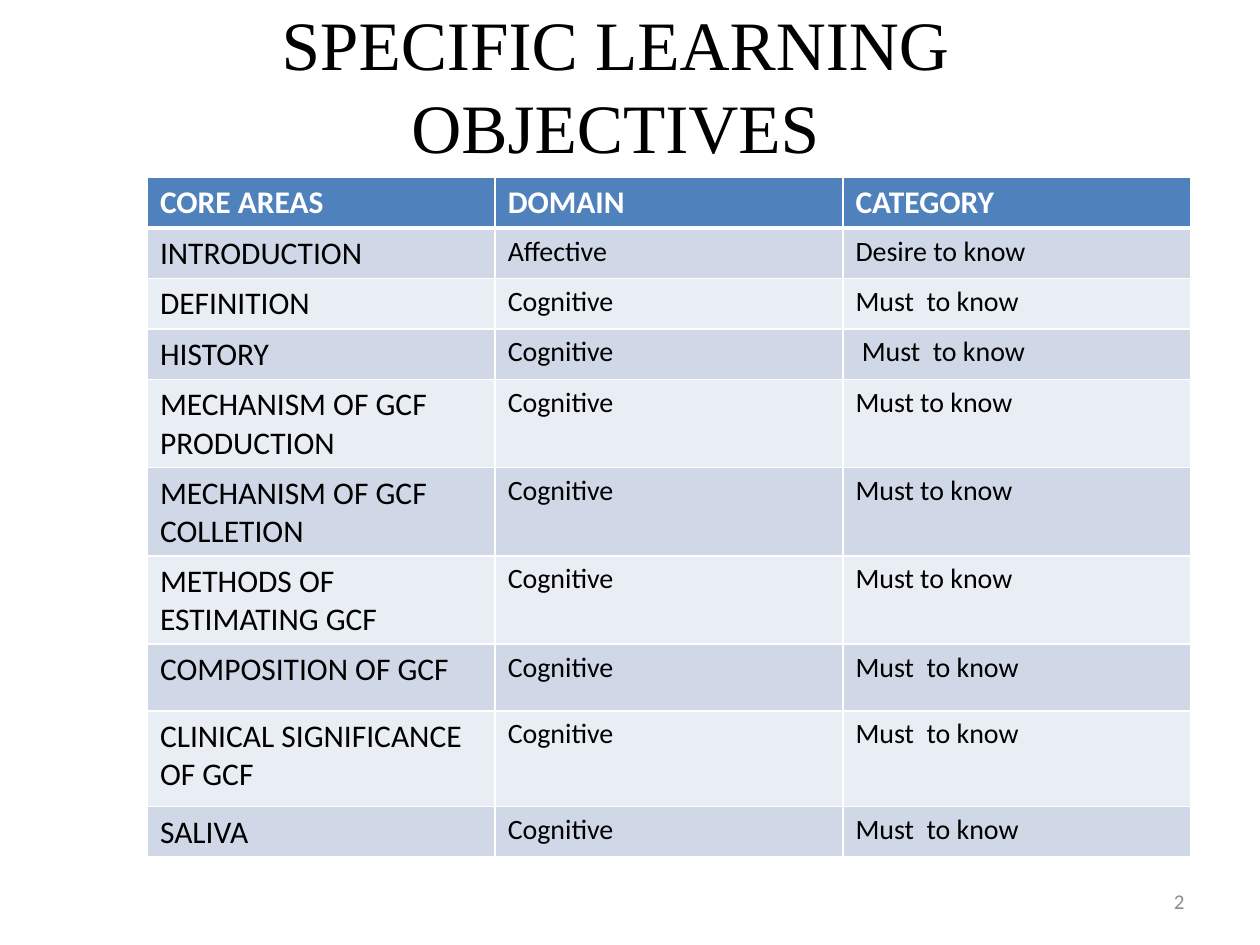
from pptx import Presentation
from pptx.dml.color import RGBColor as RGB
from pptx.enum.text import MSO_ANCHOR as ANCHOR, PP_ALIGN as ALIGN
from pptx.oxml import parse_xml
from pptx.oxml.ns import nsdecls
from pptx.util import Inches, Pt

COLORS = {
    "text": "000000",
    "number": "8C8C8C",
    "white": "FFFFFF",
    "header": "4F81BD",
    "odd": "D0D8E8",
    "even": "E9EDF4",
}
HEADER = ("CORE AREAS", "DOMAIN", "CATEGORY")
OBJECTIVES = [
    ("INTRODUCTION", "Affective", "Desire to know"),
    ("DEFINITION", "Cognitive", "Must  to know"),
    ("HISTORY", "Cognitive", " Must  to know"),
    ("MECHANISM OF GCF PRODUCTION", "Cognitive", "Must to know"),
    ("MECHANISM OF GCF COLLETION", "Cognitive", "Must to know"),
    ("METHODS OF ESTIMATING GCF", "Cognitive", "Must to know"),
    ("COMPOSITION OF GCF", "Cognitive", "Must  to know"),
    ("CLINICAL SIGNIFICANCE OF GCF", "Cognitive", "Must  to know"),
    ("SALIVA", "Cognitive", "Must  to know"),
]
ROW_HEIGHTS = (0.31, 0.33, 0.31, 0.31, 0.53, 0.53, 0.53, 0.53, 0.76, 0.31)
COL_WIDTH = 2.76


class Deck:
    """Holds the slide style and draws each kind of element."""

    def __init__(self, slide, font="Calibri"):
        self.s = slide
        self.font = font

    def style(self, p, size, color, font=None, bold=False):
        p.font.name = font or self.font
        p.font.size = Pt(size)
        p.font.bold = bold
        p.font.color.rgb = RGB.from_string(COLORS[color])

    def text(self, text, box, size, color, align, font=None):
        tf = self.s.shapes.add_textbox(*map(Inches, box)).text_frame
        tf.word_wrap = True
        tf.vertical_anchor = ANCHOR.MIDDLE
        p = tf.paragraphs[0]
        p.text = text
        p.alignment = align
        self.style(p, size, color, font)

    def borders(self, cell, widths):
        tc_pr = cell._tc.get_or_add_tcPr()
        for side, width in zip("LRTB", widths):
            tc_pr.append(parse_xml(
                f'<a:ln{side} {nsdecls("a")} w="{Pt(width)}"><a:solidFill>'
                f'<a:srgbClr val="{COLORS["white"]}"/></a:solidFill></a:ln{side}>'))

    def cell(self, cell, text, size, color, fill, bold, widths):
        cell.text = text
        self.style(cell.text_frame.paragraphs[0], size, color, bold=bold)
        self.borders(cell, widths)
        cell.fill.solid()
        cell.fill.fore_color.rgb = RGB.from_string(COLORS[fill])

    def table(self, rows, left, top, col_width, heights):
        cols = len(rows[0])
        box = (left, top, col_width * cols, sum(heights))
        table = self.s.shapes.add_table(len(rows), cols, *map(Inches, box)).table
        for col in table.columns:
            col.width = Inches(col_width)
        for i, (row, height) in enumerate(zip(rows, heights)):
            table.rows[i].height = Inches(height)
            head = i == 0
            fill = "header" if head else "odd" if i % 2 else "even"
            widths = (1, 1, 3 if i == 1 else 1, 3 if head else 1)
            for j, text in enumerate(row):
                size = 18 if head or j == 0 else 16
                color = "white" if head else "text"
                self.cell(table.cell(i, j), text, size, color, fill, head, widths)


def main():
    prs = Presentation()
    prs.slide_width, prs.slide_height = Inches(10), Inches(7.5)
    deck = Deck(prs.slides.add_slide(prs.slide_layouts[6]))
    deck.text("SPECIFIC LEARNING OBJECTIVES", (0.86, 0.16, 8.05, 1.02),
              39.6, "text", ALIGN.CENTER, "Times New Roman")
    deck.text("2", (7.17, 6.95, 2.33, 0.4), 12, "number", ALIGN.RIGHT)
    deck.table([HEADER, *OBJECTIVES], 1.17, 1.41, COL_WIDTH, ROW_HEIGHTS)
    prs.save("out.pptx")


if __name__ == "__main__":
    main()
